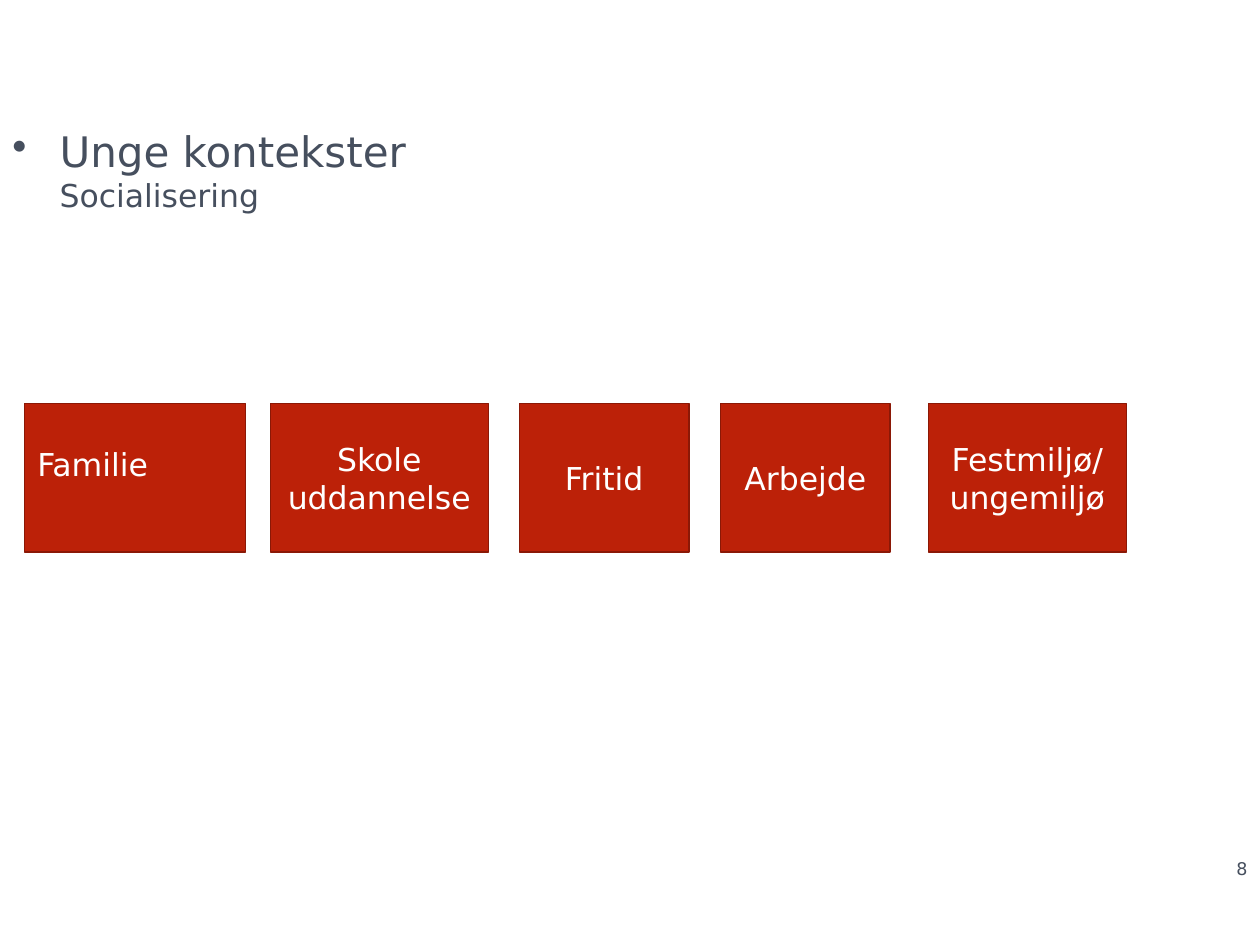
from lxml.etree import SubElement
from pptx import Presentation
from pptx.dml.color import RGBColor as RGB
from pptx.enum.shapes import MSO_SHAPE as SHAPE
from pptx.enum.text import MSO_ANCHOR as ANCHOR, PP_ALIGN as ALIGN
from pptx.oxml.ns import qn
from pptx.util import Pt

COLORS = {"text": "464F5E", "box": "BC2108", "edge": "8B1806", "light": "FFFFFF"}
FONT = "DejaVu Sans"


def add_run(p, text, size, color):
    r = p.add_run()
    r.text = text
    for name, value in {"name": FONT, "size": Pt(size)}.items():
        setattr(r.font, name, value)
    r.font.color.rgb = RGB.from_string(COLORS[color])


def add_text_box(left, top, width, height, wrap=True):
    tf = s.shapes.add_textbox(Pt(left), Pt(top), Pt(width), Pt(height)).text_frame
    tf.word_wrap = wrap
    return tf.paragraphs[0]


prs = Presentation()
prs.slide_width, prs.slide_height = Pt(720), Pt(540)
s = prs.slides.add_slide(prs.slide_layouts[6])

# Heading with a bullet and a smaller second line
p = add_text_box(0, 68.4, 720, 60)
pPr = p._p.get_or_add_pPr()
for name, value in {"marL": Pt(27), "indent": -Pt(27)}.items():
    pPr.set(name, str(int(value)))
bullet_color = SubElement(pPr, qn("a:buClr"))
SubElement(bullet_color, qn("a:srgbClr")).set("val", COLORS["text"])
SubElement(pPr, qn("a:buChar")).set("char", "•")
add_run(p, "Unge kontekster", 24, "text")
p.add_line_break()
add_run(p, "Socialisering", 18, "text")

# Slide number
p = add_text_box(654, 486.7, 66, 30)
p.alignment = ALIGN.RIGHT
add_run(p, "8", 10, "text")

# Row of contexts: left, width, label
contexts = [
    (14.2, 126, ""),
    (154.4, 124.7, "Skole uddannelse"),
    (296.8, 97, "Fritid"),
    (411.7, 97, "Arbejde"),
    (530.6, 113, "Festmiljø/ungemiljø"),
]
for left, width, label in contexts:
    sp = s.shapes.add_shape(SHAPE.RECTANGLE, Pt(left), Pt(230.4), Pt(width), Pt(85))
    sp.shadow.inherit = False
    sp.fill.solid()
    sp.fill.fore_color.rgb = RGB.from_string(COLORS["box"])
    sp.line.color.rgb = RGB.from_string(COLORS["edge"])
    sp.line.width = Pt(0.75)
    if label:
        tf = sp.text_frame
        tf.word_wrap = True
        tf.vertical_anchor = ANCHOR.MIDDLE
        p = tf.paragraphs[0]
        p.alignment = ALIGN.CENTER
        add_run(p, label, 18, "light")

# The first context has its label in a separate left-aligned box
add_run(add_text_box(14.2, 250.6, 79, 29, wrap=False), "Familie", 18, "light")

prs.save("out.pptx")
